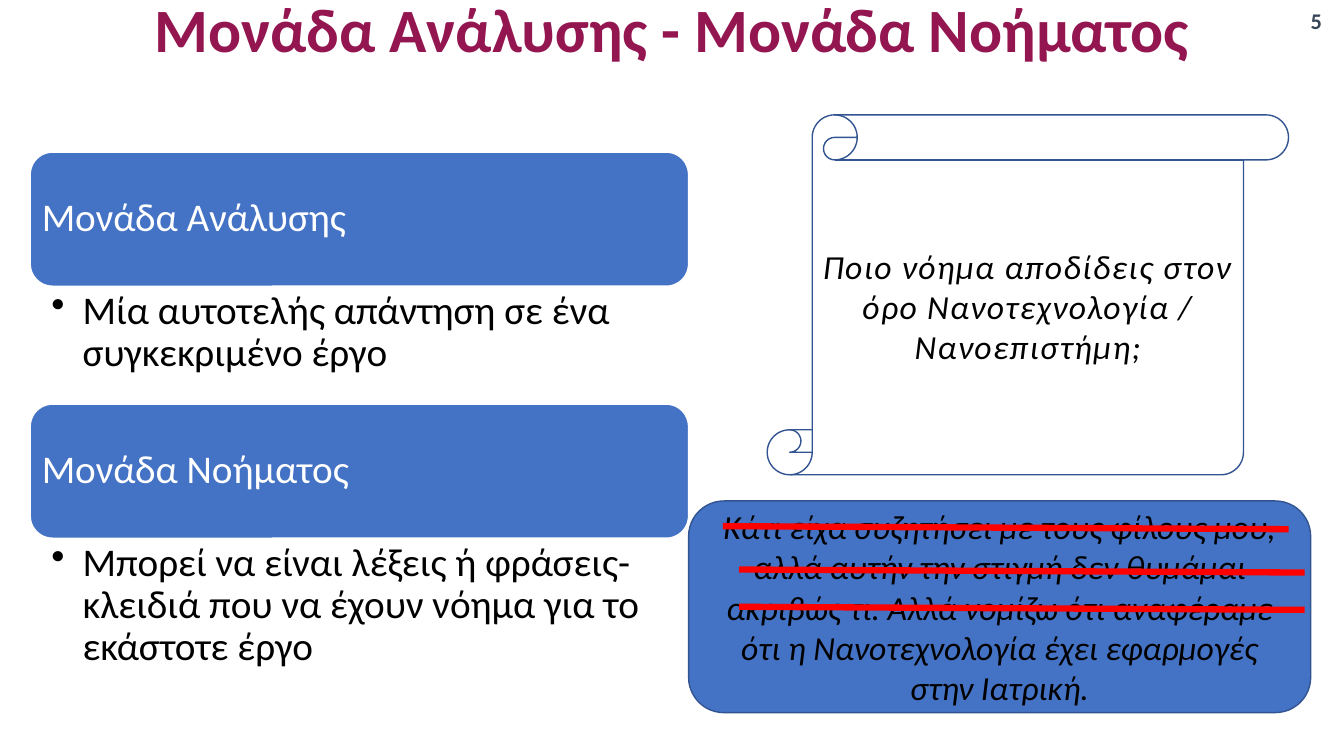
from lxml.etree import SubElement
from pptx import Presentation
from pptx.dml.color import RGBColor
from pptx.enum.shapes import MSO_CONNECTOR as Connector, MSO_SHAPE as Shape
from pptx.enum.text import MSO_ANCHOR as Anchor, PP_ALIGN as Align
from pptx.oxml.ns import qn
from pptx.util import Inches, Pt

BLUE, OUTLINE, RED = "4472C4", "325491", "FF0000"
BLACK, WHITE, PLUM, SLATE = "000000", "FFFFFF", "941651", "374558"
CARD_WIDTH, CARD_HEIGHT = 6.53, 1.33
CARDS = [
    (1.51, 1.18, "Μονάδα Ανάλυσης",
     "Μία αυτοτελής απάντηση σε ένα συγκεκριμένο έργο"),
    (4.01, 1.36, "Μονάδα Νοήματος",
     "Μπορεί να είναι λέξεις ή φράσεις-κλειδιά που να έχουν νόημα για το εκάστοτε έργο"),
]
QUESTION = "Ποιο νόημα αποδίδεις στον όρο Νανοτεχνολογία / Νανοεπιστήμη;"
ANSWER = ("Κάτι είχα συζητήσει με τους φίλους μου, αλλά αυτήν την στιγμή δεν "
          "θυμάμαι ακριβώς τι. Αλλά νομίζω ότι αναφέραμε ότι η Νανοτεχνολογία "
          "έχει εφαρμογές στην Ιατρική.")


def rgb(color):
    return RGBColor.from_string(color)


def set_all(target, values):
    for name, value in values.items():
        setattr(target, name, value)


def write(box, text, size, color, align=Align.LEFT, anchor=Anchor.MIDDLE,
          margins=(0.1, 0.05, 0.1, 0.05), spacing=1.0, **font):
    """Fill a shape with one formatted paragraph and return it with its run."""
    frame = box.text_frame
    left, top, right, bottom = map(Inches, margins)
    set_all(frame, dict(word_wrap=True, vertical_anchor=anchor, margin_left=left,
                        margin_top=top, margin_right=right, margin_bottom=bottom))
    para = frame.paragraphs[0]
    set_all(para, dict(alignment=align, line_spacing=spacing))
    span = para.add_run()
    span.text = text
    set_all(span.font, dict(name="Calibri", size=Pt(size), **font))
    span.font.color.rgb = rgb(color)
    return para, span


def add_textbox(page, *place):
    return page.shapes.add_textbox(*map(Inches, place))


def add_panel(page, kind, place, fill, line):
    panel = page.shapes.add_shape(kind, *map(Inches, place))
    panel.shadow.inherit = False
    if fill:
        panel.fill.solid()
        panel.fill.fore_color.rgb = rgb(fill)
    else:
        panel.fill.background()
    panel.line.color.rgb = rgb(line)
    panel.line.width = Pt(1)
    return panel


def add_bullet(para, indent):
    properties = para._p.get_or_add_pPr()
    properties.set("marL", str(Inches(indent)))
    properties.set("indent", str(-Inches(indent)))
    SubElement(properties, qn("a:buChar")).set("char", "•")


def add_header(page, title, number):
    write(add_textbox(page, 0.92, 0, 11.5, 0.64), title, 44, PLUM,
          Align.CENTER, spacing=0.9, bold=True)
    write(add_textbox(page, 12.78, 0, 0.55, 0.4), number, 16, SLATE,
          Align.CENTER, bold=True)


def add_card(page, left, top, body_height, heading, body):
    """Place a blue heading with its bulleted explanation below."""
    panel = add_panel(page, Shape.ROUNDED_RECTANGLE,
                      (left, top, CARD_WIDTH, CARD_HEIGHT), BLUE, WHITE)
    write(panel, heading, 28, WHITE, margins=(0.05,) * 4, spacing=0.9)
    box = add_textbox(page, left, top + CARD_HEIGHT, CARD_WIDTH, body_height)
    para, _ = write(box, body, 28, BLACK, anchor=Anchor.TOP,
                    margins=(0.21, 0.04, 0.22, 0.04), spacing=0.9)
    add_bullet(para, 0.31)


def add_question(page, *place):
    scroll = add_panel(page, Shape.VERTICAL_SCROLL, place, None, OUTLINE)
    _, span = write(scroll, QUESTION, 24, BLACK, Align.CENTER, italic=True)
    span.font._element.set("spc", "100")


def add_answer(page, left, top, width, height):
    """Place the answer and strike out its first three lines."""
    panel = add_panel(page, Shape.ROUNDED_RECTANGLE,
                      (left, top, width, height), BLUE, OUTLINE)
    write(panel, ANSWER, 24, BLACK, Align.CENTER, italic=True)
    for across, down in [(0.34, 0.25), (0.5, 0.68), (0.5, 1.05)]:
        x, y = left + across, top + down
        strike = page.shapes.add_connector(
            Connector.STRAIGHT, *map(Inches, (x, y, x + 5.61, y + 0.03)))
        strike.line.color.rgb = rgb(RED)
        strike.line.width = Pt(4.5)
        SubElement(strike._element.spPr, qn("a:effectLst"))


def main():
    deck = Presentation()
    set_all(deck, dict(slide_width=Inches(13.33), slide_height=Inches(7.5)))
    page = deck.slides.add_slide(deck.slide_layouts[6])
    add_header(page, "Μονάδα Ανάλυσης - Μονάδα Νοήματος", "5")
    for card in CARDS:
        add_card(page, 0.3, *card)
    add_question(page, 7.61, 1.14, 5.17, 3.57)
    add_answer(page, 6.83, 4.97, 6.17, 2.1)
    deck.save("out.pptx")


if __name__ == "__main__":
    main()
